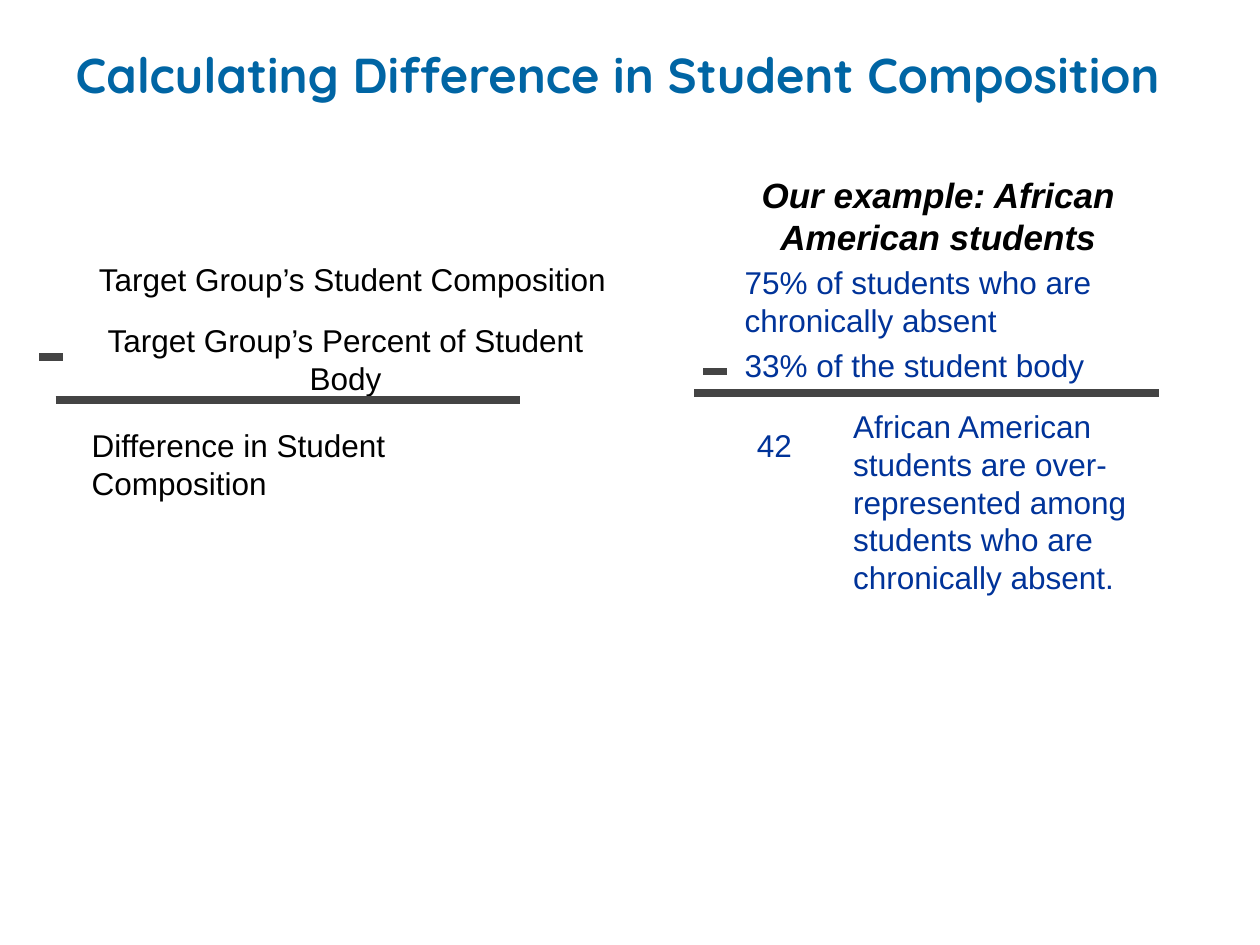
from lxml.etree import SubElement
from pptx import Presentation
from pptx.dml.color import RGBColor
from pptx.enum.shapes import MSO_CONNECTOR
from pptx.enum.text import MSO_ANCHOR, MSO_AUTO_SIZE, PP_ALIGN
from pptx.oxml.ns import qn
from pptx.util import Cm, Pt

TITLE_BLUE = RGBColor(0x00, 0x65, 0xA4)
EXAMPLE_BLUE = RGBColor(0x00, 0x33, 0x99)
BLACK = RGBColor(0x00, 0x00, 0x00)
GRAY = RGBColor(0x44, 0x44, 0x44)
LEFT, CENTER = PP_ALIGN.LEFT, PP_ALIGN.CENTER
MINUS_WIDTH, RULE_WIDTH = 0.48, 9.36


def write(tf, text, font="Arial", size=18, color=BLACK, bold=False,
          italic=False, align=LEFT, indent=0):
    """Fill a text frame with one formatted paragraph."""
    tf.word_wrap = True
    tf.vertical_anchor = MSO_ANCHOR.TOP
    p = tf.paragraphs[0]
    p.alignment = align
    if indent:
        p.level = 1
        pPr = p._p.get_or_add_pPr()
        pPr.set("marL", str(Cm(indent)))
        pPr.set("indent", "0")
    r = p.add_run()
    r.text = text
    r.font.name, r.font.size = font, Pt(size)
    r.font.bold, r.font.italic = bold, italic
    r.font.color.rgb = color


def add_text(slide, x, y, w, h, text, **fmt):
    """Add a text box that grows with its text."""
    tf = slide.shapes.add_textbox(Cm(x), Cm(y), Cm(w), Cm(h)).text_frame
    write(tf, text, **fmt)
    tf.auto_size = MSO_AUTO_SIZE.SHAPE_TO_FIT_TEXT


def add_bar(slide, x, y, w):
    """Draw a thick horizontal line."""
    line = slide.shapes.add_connector(
        MSO_CONNECTOR.STRAIGHT, Cm(x), Cm(y), Cm(x + w), Cm(y))
    line.line.color.rgb = GRAY
    line.line.width = Pt(4.5)
    SubElement(line._element.spPr, qn("a:effectLst"))


def add_title(slide, x, y, w, h):
    """Place and fill the slide title."""
    title = slide.shapes.title
    title.left, title.top, title.width, title.height = Cm(x), Cm(y), Cm(w), Cm(h)
    write(title.text_frame, "Calculating Difference in Student Composition",
          font="Quicksand", size=28, color=TITLE_BLUE, bold=True)
    title.text_frame.auto_size = MSO_AUTO_SIZE.NONE


def add_formula(slide, x, y):
    """Lay out the general subtraction."""
    add_text(slide, x + 0.28, y, 12.07, 1.02,
             "Target Group’s Student Composition", align=CENTER)
    add_bar(slide, x, y + 2.08, MINUS_WIDTH)
    add_text(slide, x + 0.64, y + 1.24, 11.07, 1.8,
             "Target Group’s Percent of Student Body", align=CENTER)
    add_bar(slide, x + 0.33, y + 2.95, RULE_WIDTH)
    add_text(slide, x + 0.81, y + 3.35, 8.59, 1.8,
             "Difference in Student Composition")


def add_example(slide, x, y):
    """Lay out the worked subtraction with its heading and conclusion."""
    add_text(slide, x + 1.32, y + 1.8, 8.59, 1.8,
             "75% of students who are chronically absent", color=EXAMPLE_BLUE)
    add_text(slide, x, y, 10.95, 1.96, "Our example: African American students",
             size=20, bold=True, italic=True, align=CENTER)
    add_text(slide, x + 1.32, y + 3.48, 8.59, 1.02,
             "33% of the student body", color=EXAMPLE_BLUE)
    add_bar(slide, x + 0.74, y + 4.11, MINUS_WIDTH)
    add_bar(slide, x + 0.56, y + 4.55, RULE_WIDTH)
    add_text(slide, x + 1.04, y + 5.08, 2.26, 1.02, "42",
             color=EXAMPLE_BLUE, align=CENTER)
    add_text(slide, x + 2.24, y + 4.7, 8.05, 4.11,
             "African American students are over-represented among "
             "students who are chronically absent.",
             color=EXAMPLE_BLUE, indent=1.27)


def main():
    """Build and save the slide."""
    prs = Presentation()
    prs.slide_width, prs.slide_height = Cm(25.4), Cm(19.05)
    s = prs.slides.add_slide(prs.slide_layouts[5])
    add_title(s, 1.27, 0.76, 22.86, 2.84)
    add_formula(s, 0.79, 5.11)
    add_example(s, 13.44, 3.38)
    prs.save("out.pptx")


if __name__ == "__main__":
    main()
